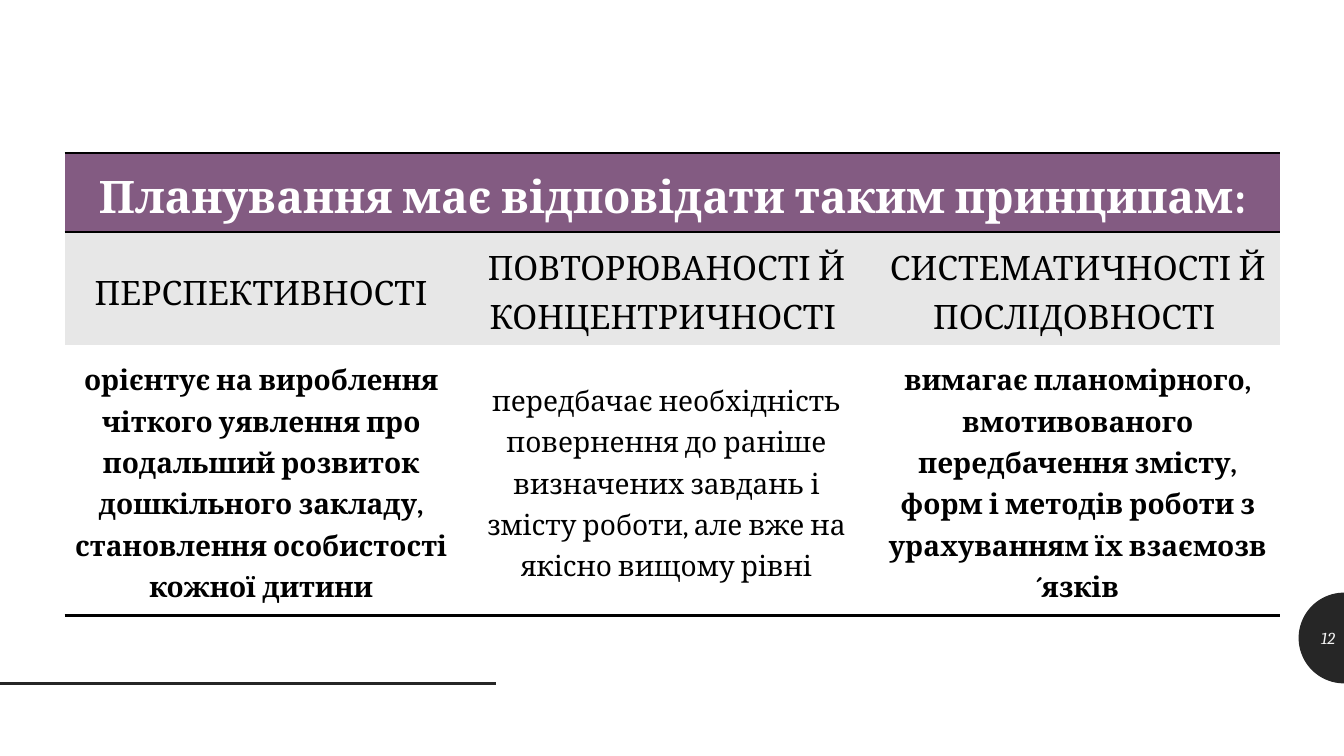
from dataclasses import dataclass
from math import cos, pi, sin

from lxml import etree
from pptx import Presentation
from pptx.dml.color import RGBColor
from pptx.enum import shapes, text
from pptx.oxml import ns
from pptx.util import Inches, Pt


@dataclass(frozen=True)
class Theme:
    font: str = "Cambria"
    dark: str = "262626"
    pale: str = "F5F5F5"
    black: str = "000000"
    white: str = "FFFFFF"
    plum: str = "835B82"
    gray: str = "E7E7E7"
    title: int = 32
    head: int = 24
    body: int = 20
    note: int = 12
    rule: int = 2


THEME = Theme()
WIDTH, HEIGHT = 13.33, 7.5
BADGE_Y, RADIUS = 6.33, 0.45
COLS = (3.9, 4.14, 4.02)
ROWS = (0.57, 0.99, 2.68)
TITLE = "Планування має відповідати таким принципам:"
HEADS = (
    "ПЕРСПЕКТИВНОСТІ",
    "ПОВТОРЮВАНОСТІ Й КОНЦЕНТРИЧНОСТІ ",
    "СИСТЕМАТИЧНОСТІ Й ПОСЛІДОВНОСТІ ",
)
BODIES = (
    "орієнтує на вироблення чіткого уявлення про подальший розвиток "
    "дошкільного закладу, становлення особистості кожної дитини",
    "передбачає необхідність повернення до раніше визначених завдань і "
    "змісту роботи, але вже на якісно вищому рівні",
    "вимагає планомірного, вмотивованого передбачення змісту, форм і "
    "методів роботи з урахуванням їх взаємозв´язків",
)


def paint(fill, color):
    fill.solid()
    fill.fore_color.rgb = RGBColor.from_string(color)


def style(para, size, color, bold=False, italic=False):
    font = para.font
    font.name, font.size = THEME.font, Pt(size)
    font.bold, font.italic = bold, italic
    font.color.rgb = RGBColor.from_string(color)


def add_badge(slide, number):
    """Half disc on the right edge, with the page number on it."""
    steps = 48
    turns = [pi / 2 + pi * i / steps for i in range(steps + 1)]
    points = [(Inches(WIDTH + RADIUS * cos(t)), Inches(BADGE_Y + RADIUS * sin(t)))
              for t in turns]
    build = slide.shapes.build_freeform(*points[0])
    build.add_line_segments(points[1:], close=True)
    disc = build.convert_to_shape()
    disc.shadow.inherit = False
    paint(disc.fill, THEME.dark)
    disc.line.fill.background()

    box = slide.shapes.add_textbox(Inches(WIDTH - RADIUS + 0.01), Inches(BADGE_Y - 0.2),
                                   Inches(RADIUS), Inches(0.4))
    frame = box.text_frame
    frame.word_wrap = True
    frame.vertical_anchor = text.MSO_ANCHOR.MIDDLE
    para = frame.paragraphs[0]
    para.text = number
    para.alignment = text.PP_ALIGN.RIGHT
    style(para, THEME.note, THEME.pale, italic=True)


def add_rule(slide, end, y):
    line = slide.shapes.add_connector(shapes.MSO_CONNECTOR.STRAIGHT,
                                      0, Inches(y), Inches(end), Inches(y))
    line.line.color.rgb = RGBColor.from_string(THEME.dark)
    line.line.width = Pt(THEME.rule)
    etree.SubElement(line._element.spPr, ns.qn("a:effectLst"))


def set_edges(cell, ruled):
    """Draw the sides named in ruled and clear the others."""
    props = cell._tc.get_or_add_tcPr()
    for side in "LRTB":
        edge = etree.SubElement(props, ns.qn(f"a:ln{side}"))
        if side in ruled:
            edge.set("w", str(Pt(THEME.rule)))
            fill = etree.SubElement(edge, ns.qn("a:solidFill"))
            etree.SubElement(fill, ns.qn("a:srgbClr"), val=THEME.black)
        else:
            etree.SubElement(edge, ns.qn("a:noFill"))


def fill_cell(cell, words, size, color, back, ruled, bold):
    set_edges(cell, ruled)
    paint(cell.fill, back)
    para = cell.text_frame.paragraphs[0]
    para.text = words
    para.alignment = text.PP_ALIGN.CENTER
    para.line_spacing = 1.28
    style(para, size, color, bold)


def add_grid(slide):
    table = slide.shapes.add_table(
        len(ROWS), len(COLS), Inches(0.64), Inches(1.52),
        Inches(sum(COLS)), Inches(sum(ROWS))).table
    table.first_row = table.horz_banding = False
    for col, width in zip(table.columns, COLS):
        col.width = Inches(width)
    for row, height in zip(table.rows, ROWS):
        row.height = Inches(height)

    looks = (
        ((TITLE, "", ""), THEME.title, THEME.white, THEME.plum, "TB", (True,) * 3),
        (HEADS, THEME.head, THEME.black, THEME.gray, "T", (False,) * 3),
        (BODIES, THEME.body, THEME.black, THEME.white, "B", (True, False, True)),
    )
    for r, (words, size, color, back, ruled, bolds) in enumerate(looks):
        for c, (word, bold) in enumerate(zip(words, bolds)):
            cell = table.cell(r, c)
            fill_cell(cell, word, size, color, back, ruled, bold)
            if r:
                cell.vertical_anchor = text.MSO_ANCHOR.MIDDLE
    table.cell(0, 0).merge(table.cell(0, len(COLS) - 1))


def main():
    deck = Presentation()
    deck.slide_width, deck.slide_height = Inches(WIDTH), Inches(HEIGHT)
    slide = deck.slides.add_slide(deck.slide_layouts[6])
    add_badge(slide, "12")
    add_rule(slide, 4.92, BADGE_Y + RADIUS)
    add_grid(slide)
    deck.save("out.pptx")


if __name__ == "__main__":
    main()
